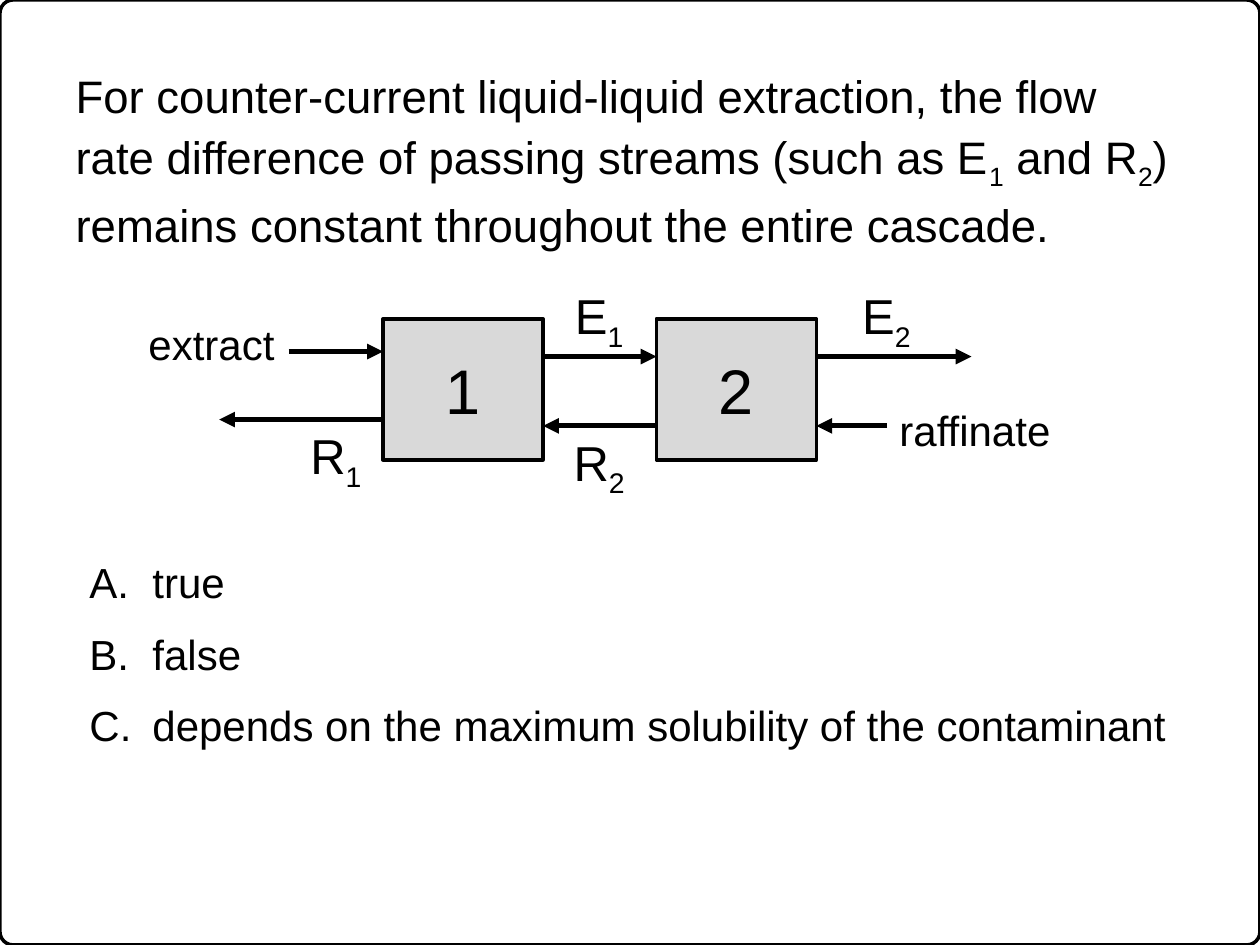
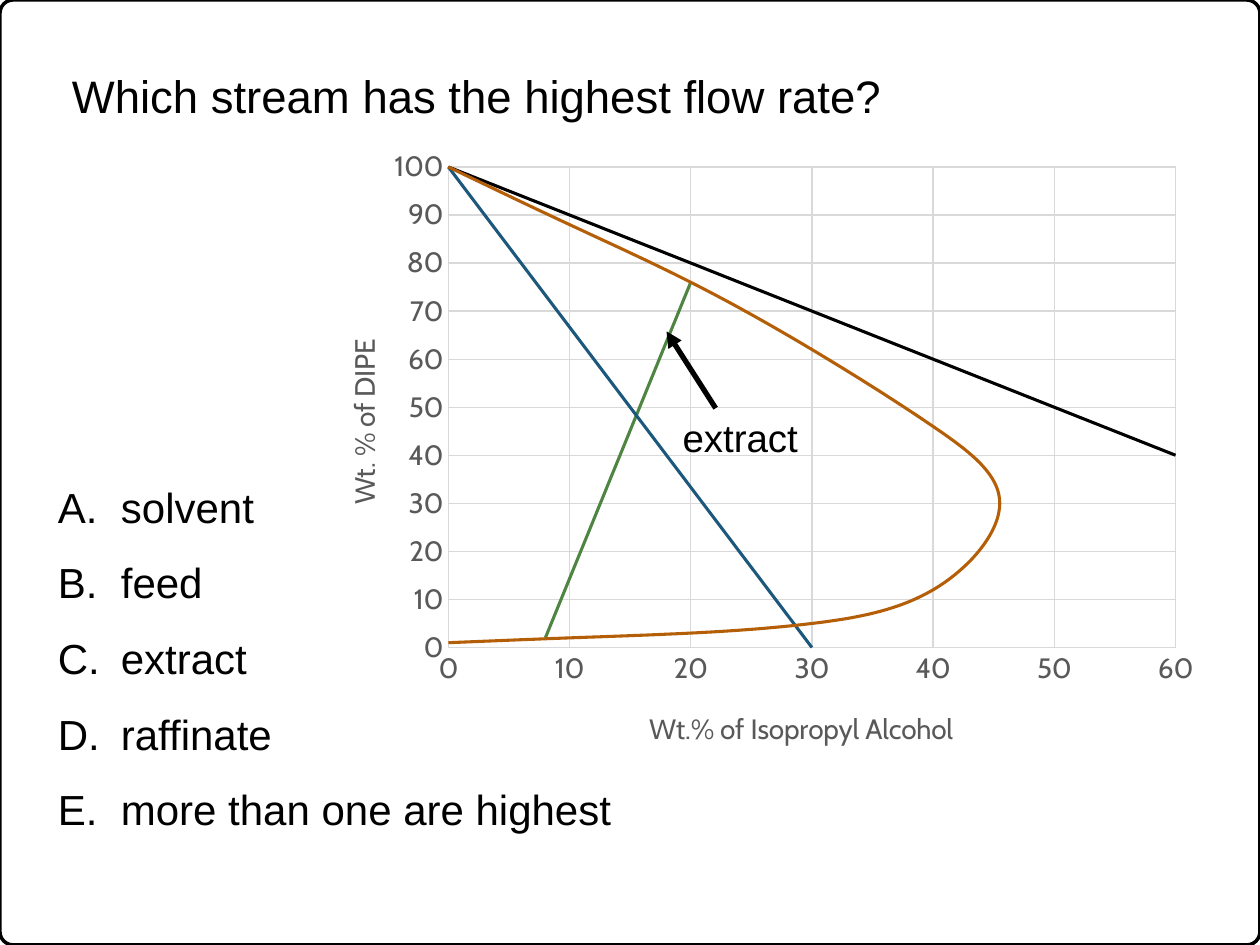
import pptx
import pptx.chart.data
import pptx.dml.color
import pptx.enum.chart
import pptx.enum.shapes
import pptx.enum.text
import pptx.oxml.ns
import pptx.util
from lxml import etree

PX = 9144
BLACK, BOX_GRAY, GRID_GRAY, AXIS_GRAY = "000000", "D9D9D9", "D9D9D9", "595959"
BODY_FONT, CHART_FONT = "Arial", "Cabin"
rgb = pptx.dml.color.RGBColor.from_string
qn = pptx.oxml.ns.qn
Pt = pptx.util.Pt
LEFT = pptx.enum.text.PP_ALIGN.LEFT
CENTER = pptx.enum.text.PP_ALIGN.CENTER


def write(sp, paragraphs, size, align=LEFT, inset=0, lettered=False, line=None, after=None):
    tf = sp.text_frame
    tf.word_wrap = True
    tf.margin_left = tf.margin_right = 2 * inset * PX
    tf.margin_top = tf.margin_bottom = inset * PX
    for i, parts in enumerate(paragraphs):
        p = tf.add_paragraph() if i else tf.paragraphs[0]
        p.alignment = align
        if lettered:
            pPr = p._p.get_or_add_pPr()
            pPr.set("marL", str(50 * PX))
            pPr.set("indent", str(-50 * PX))
            clr = etree.SubElement(pPr, qn("a:buClr"))
            etree.SubElement(clr, qn("a:srgbClr"), val=BLACK)
            etree.SubElement(pPr, qn("a:buFont"), typeface=BODY_FONT)
            etree.SubElement(pPr, qn("a:buAutoNum"), type="alphaUcPeriod")
        if line:
            p.line_spacing = line
        if after:
            p.space_after = Pt(after)
        for j, part in enumerate(parts):
            r = p.add_run()
            r.text = part
            r.font.name = BODY_FONT
            r.font.size = Pt(size)
            r.font.color.rgb = rgb(BLACK)
            if j % 2:
                r._r.get_or_add_rPr().set("baseline", "-25000")


def add_arrow(s, *ends):
    c = s.shapes.add_connector(pptx.enum.shapes.MSO_CONNECTOR.STRAIGHT, *[v * PX for v in ends])
    c.line.color.rgb = rgb(BLACK)
    c.line.width = Pt(3)
    etree.SubElement(c.line._get_or_add_ln(), qn("a:tailEnd"), type="triangle")
    etree.SubElement(c._element.spPr, qn("a:effectLst"))


prs = pptx.Presentation()
prs.slide_width = 1000 * PX
prs.slide_height = 750 * PX

questions = [
    (
        (60, 50, 879, 250),
        ["For counter-current liquid-liquid extraction, the flow rate difference of passing streams (such as E",
         "1", " and R", "2", ") remains constant throughout the entire cascade."],
        (71, 442, 875, 236),
        ["true", "false", "depends on the maximum solubility of the contaminant"],
        {"after": 12},
    ),
    (
        (57, 50, 879, 78),
        ["Which stream has the highest flow rate?"],
        (46, 362, 517, 362),
        ["solvent", "feed", "extract", "raffinate", "more than one are highest"],
        {"line": 1.5},
    ),
]
slides = []
for question_box, question, answer_box, answers, spacing in questions:
    s = prs.slides.add_slide(prs.slide_layouts[6])
    slides.append(s)
    frame = s.shapes.add_shape(pptx.enum.shapes.MSO_SHAPE.ROUNDED_RECTANGLE, 0, 0, prs.slide_width, prs.slide_height)
    frame.adjustments[0] = 0.014
    frame.shadow.inherit = False
    frame.fill.background()
    frame.line.color.rgb = rgb(BLACK)
    frame.line.width = Pt(2)
    sp = s.shapes.add_textbox(*[v * PX for v in question_box])
    write(sp, [question], 26, line=1.1)
    sp = s.shapes.add_textbox(*[v * PX for v in answer_box])
    write(sp, [[answer] for answer in answers], 24, lettered=True, **spacing)

cascade, diagram = slides

for stage, x in (("1", 304), ("2", 521)):
    sp = cascade.shapes.add_shape(pptx.enum.shapes.MSO_SHAPE.RECTANGLE, x * PX, 253 * PX, 127 * PX, 112 * PX)
    sp.shadow.inherit = False
    sp.fill.solid()
    sp.fill.fore_color.rgb = rgb(BOX_GRAY)
    sp.line.color.rgb = rgb(BLACK)
    sp.line.width = Pt(2)
    sp.text_frame.vertical_anchor = pptx.enum.text.MSO_ANCHOR.MIDDLE
    write(sp, [[stage]], 36, CENTER, 5)

for x1, x2, y in (
    (431, 521, 283), (648, 771, 283), (229, 304, 279),
    (521, 431, 338), (704, 648, 338), (304, 174, 333),
):
    add_arrow(cascade, x1, y, x2, y)

for name, x, y, w in (("extract", 108, 248, 132), ("raffinate", 704, 316, 162)):
    sp = cascade.shapes.add_textbox(x * PX, y * PX, w * PX, 50 * PX)
    write(sp, [[name]], 24, inset=5)

for stream, x, y in (("E1", 438, 222), ("E2", 666, 222), ("R2", 438, 338), ("R1", 229, 333)):
    sp = cascade.shapes.add_textbox(x * PX, y * PX, 75 * PX, 63 * PX)
    write(sp, [stream], 28, CENTER, 5)

curves = [
    ("B45F07", [(0, 1), (10, 2), (20, 3), (30, 5), (40, 12), (45.5, 30),
                (40, 46), (30, 62), (20, 76), (10, 88), (0, 100)]),
    ("000000", [(0, 100), (100, 0)]),
    ("1B587C", [(0, 100), (30, 0)]),
    ("4E8542", [(20, 76), (8, 2)]),
]
data = pptx.chart.data.XyChartData()
for i, (color, points) in enumerate(curves, 1):
    series = data.add_series(f"Series {i}")
    for x, y in points:
        series.add_data_point(x, y)
chart = diagram.shapes.add_chart(
    pptx.enum.chart.XL_CHART_TYPE.XY_SCATTER_SMOOTH_NO_MARKERS,
    263 * PX, 108 * PX, 709 * PX, 491 * PX, data,
).chart
chart.has_legend = False
chart.has_title = False
chart.font.name = BODY_FONT
chart.font.size = Pt(10)
chart.font.color.rgb = rgb(BLACK)
plot = chart.plots[0]
plot.vary_by_categories = False
for series, (color, points) in zip(plot.series, curves):
    series.format.line.color.rgb = rgb(color)
    series.format.line.width = Pt(1.75)
    series.marker.style = pptx.enum.chart.XL_MARKER_STYLE.NONE
    series._element.get_or_add_smooth().set("val", "1")

layouts = [(plot._element.getparent(), {"layoutTarget": "inner"}, {"x": 0.131, "y": 0.05, "w": 0.814, "h": 0.777})]
for axis, top, title, rotation, place in (
    (chart.category_axis, 60, "Wt.% of Isopropyl Alcohol", 0, {"x": 0.35, "y": 0.92}),
    (chart.value_axis, 100, "Wt. % of DIPE", -5400000, {"x": 0.01, "y": 0.32}),
):
    axis.minimum_scale = 0
    axis.maximum_scale = top
    axis.major_unit = 10
    axis.major_tick_mark = axis.minor_tick_mark = pptx.enum.chart.XL_TICK_MARK.NONE
    axis.has_major_gridlines = True
    for line in (axis.format.line, axis.major_gridlines.format.line):
        line.color.rgb = rgb(GRID_GRAY)
        line.width = Pt(0.75)
    axis.tick_labels.number_format = "General"
    axis.tick_labels.number_format_is_linked = False
    r = axis.axis_title.text_frame.paragraphs[0].add_run()
    r.text = title
    r.font.bold = False
    for font in (axis.tick_labels.font, r.font):
        font.name = CHART_FONT
        font.size = Pt(16)
        font.color.rgb = rgb(AXIS_GRAY)
    title_xml = axis.axis_title._element
    body = title_xml.find(".//" + qn("a:bodyPr"))
    body.set("rot", str(rotation))
    body.set("vert", "horz")
    layouts.append((title_xml, {}, place))

for parent, target, place in layouts:
    for old in parent.findall(qn("c:layout")):
        parent.remove(old)
    layout = etree.Element(qn("c:layout"))
    parent.insert(1 if parent.find(qn("c:tx")) is not None else 0, layout)
    manual = etree.SubElement(layout, qn("c:manualLayout"))
    modes = {"xMode": "edge", "yMode": "edge"}
    for tag, value in {**target, **modes, **place}.items():
        etree.SubElement(manual, qn("c:" + tag), val=str(value))

add_arrow(diagram, 568, 324, 529, 263)
sp = diagram.shapes.add_textbox(510 * PX, 324 * PX, 155 * PX, 47 * PX)
write(sp, [["extract"]], 22, CENTER, 5)

prs.save("out.pptx")
